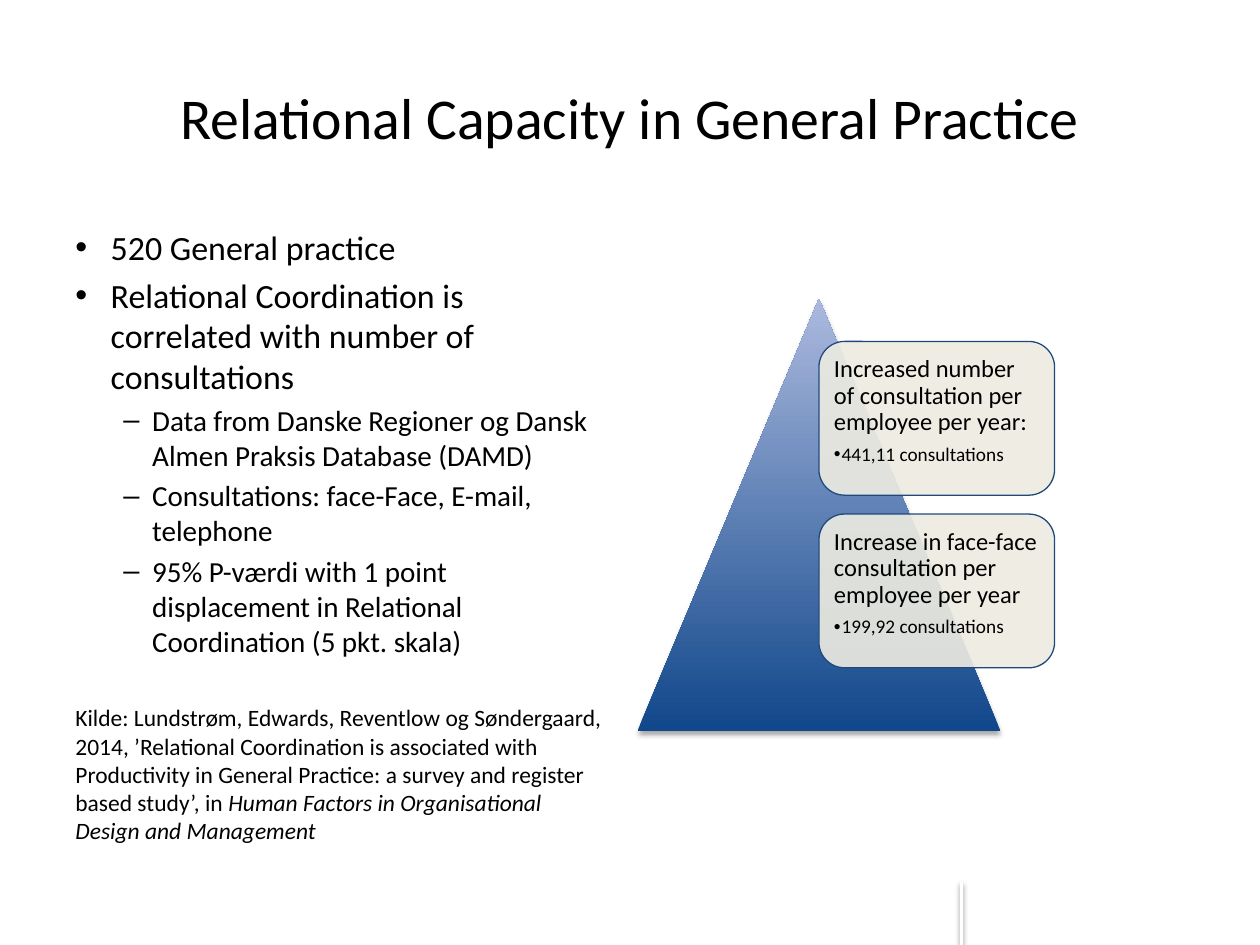
"""Build the slide on relational capacity in general practice."""
from dataclasses import dataclass

from lxml.etree import SubElement
from pptx import Presentation
from pptx.dml.color import RGBColor
from pptx.enum.shapes import MSO_CONNECTOR, MSO_SHAPE
from pptx.enum.text import MSO_ANCHOR, PP_ALIGN
from pptx.oxml.ns import qn
from pptx.util import Emu, Inches, Pt

WIDTH, HEIGHT = Inches(10), Inches(7.5)
FONT = "Calibri"
BLACK = RGBColor(0x00, 0x00, 0x00)
WHITE = RGBColor(0xFF, 0xFF, 0xFF)
DEEP_BLUE = RGBColor(0x11, 0x47, 0x8B)
PALE_BLUE = RGBColor(0xAB, 0xB9, 0xDE)
NAVY = RGBColor(0x1F, 0x49, 0x7D)
CREAM = RGBColor(0xEE, 0xEC, 0xE1)


@dataclass(frozen=True)
class Area:
    """A rectangle in percent of the slide's width and height."""
    left: float
    top: float
    width: float
    height: float

    def box(self) -> tuple[Emu, Emu, Emu, Emu]:
        """Return left, top, width and height as lengths."""
        return across(self.left), down(self.top), across(self.width), down(self.height)


@dataclass(frozen=True)
class Level:
    """The look of one outline level."""
    size: float
    indent: float = 0
    hang: float = 0
    bullet: str = ""


@dataclass(frozen=True)
class Finding:
    """A measured effect and its value."""
    effect: str
    value: str


TITLE = Area(5, 4, 90, 16.67)
BODY = Area(5, 23.33, 44.2, 66)
PYRAMID = Area(50.6, 31.6, 28.8, 45.73)
CARD = Area(65, 36.13, 18.7, 16.27)
CARD_STEP = 18.27

POINT = Level(19.4, 0.28, 0.28, "•")
DETAIL = Level(16.6, 0.61, 0.23, "–")
SOURCE = Level(13.4)
EFFECT = Level(14)
VALUE = Level(11, 0.06, 0.06, "•")

OUTLINE = [
    (POINT, "520 General practice"),
    (POINT, "Relational Coordination is correlated with number of consultations"),
    (DETAIL, "Data from Danske Regioner og Dansk Almen Praksis Database (DAMD)"),
    (DETAIL, "Consultations: face-Face, E-mail, telephone"),
    (DETAIL, "95% P-værdi with 1 point displacement in Relational Coordination (5 pkt. skala)"),
]
CITATION = (
    "Kilde: Lundstrøm, Edwards, Reventlow og Søndergaard, 2014, ’Relational Coordination "
    "is associated with Productivity in General Practice: a survey and register based study’, in "
)
JOURNAL = "Human Factors in Organisational Design and Management"
FINDINGS = [
    Finding("Increased number of consultation per employee per year:", "441,11 consultations"),
    Finding("Increase in face-face consultation per employee per year", "199,92 consultations"),
]


def across(share: float) -> Emu:
    """Turn a percentage of the slide's width into a length."""
    return Emu(round(WIDTH * share / 100))


def down(share: float) -> Emu:
    """Turn a percentage of the slide's height into a length."""
    return Emu(round(HEIGHT * share / 100))


def write(frame, text: str, level: Level, *, italic_end: str = "", align=PP_ALIGN.LEFT,
          before: float = 0, after: float = 0, spacing: float = 1.0) -> None:
    """Append a formatted paragraph, reusing the frame's empty first one."""
    first = frame.paragraphs[0]
    paragraph = frame.add_paragraph() if first.runs else first
    paragraph.alignment = align
    paragraph.line_spacing = spacing
    paragraph.space_before, paragraph.space_after = Pt(before), Pt(after)
    if level.bullet:
        properties = paragraph._p.get_or_add_pPr()
        properties.set("marL", str(Inches(level.indent)))
        properties.set("indent", str(-Inches(level.hang)))
        SubElement(properties, qn("a:buFont"), typeface="Arial")
        SubElement(properties, qn("a:buChar"), char=level.bullet)
    for words, italic in ((text, False), (italic_end, True)):
        if words:
            run = paragraph.add_run()
            run.text = words
            run.font.name, run.font.size = FONT, Pt(level.size)
            run.font.color.rgb, run.font.italic = BLACK, italic


def set_shadow(shape, opacity: int = 0, distance: float = 0) -> None:
    """Give a shape a soft shadow below it, or none when opacity is zero."""
    effects = SubElement(shape._element.spPr, qn("a:effectLst"))
    if opacity:
        shadow = SubElement(effects, qn("a:outerShdw"), blurRad=str(Pt(3.1)),
                            dist=str(Pt(distance)), dir="5400000", rotWithShape="0")
        shade = SubElement(shadow, qn("a:srgbClr"), val=str(BLACK))
        SubElement(shade, qn("a:alpha"), val=str(opacity * 1000))


def draw_footer_rule(slide) -> None:
    """Draw the short white rule at the bottom edge."""
    rule = slide.shapes.add_connector(
        MSO_CONNECTOR.STRAIGHT, across(76.3), down(93.33), across(76.3), HEIGHT)
    rule.line.color.rgb, rule.line.width = WHITE, Pt(2)
    set_shadow(rule, 38, 1.6)


def fill_title(slide) -> None:
    """Place and format the title."""
    title = slide.shapes.title
    title.left, title.top, title.width, title.height = TITLE.box()
    title.text_frame.vertical_anchor = MSO_ANCHOR.MIDDLE
    write(title.text_frame, "Relational Capacity in General Practice", Level(33),
          align=PP_ALIGN.CENTER)


def draw_outline(slide) -> None:
    """Write the bulleted outline and its source."""
    frame = slide.shapes.add_textbox(*BODY.box()).text_frame
    frame.word_wrap = True
    for position, (level, text) in enumerate(OUTLINE):
        write(frame, text, level, before=level.size * 0.2 if position else 0)
    write(frame, CITATION, SOURCE, italic_end=JOURNAL, before=26)


def draw_pyramid(slide) -> None:
    """Draw the shaded triangle behind the findings."""
    pyramid = slide.shapes.add_shape(MSO_SHAPE.ISOSCELES_TRIANGLE, *PYRAMID.box())
    pyramid.fill.gradient()
    pyramid.fill.gradient_angle = 90
    for stop, position, color in zip(pyramid.fill.gradient_stops, (0, 1), (DEEP_BLUE, PALE_BLUE)):
        stop.position, stop.color.rgb = position, color
    pyramid.line.fill.background()
    set_shadow(pyramid, 35, 1.8)


def draw_finding(slide, finding: Finding, row: int) -> None:
    """Draw one translucent card with an effect and its value."""
    area = Area(CARD.left, CARD.top + row * CARD_STEP, CARD.width, CARD.height)
    card = slide.shapes.add_shape(MSO_SHAPE.ROUNDED_RECTANGLE, *area.box())
    card.fill.solid()
    card.fill.fore_color.rgb = CREAM
    tone = card._element.spPr.find(qn("a:solidFill")).find(qn("a:srgbClr"))
    SubElement(tone, qn("a:alpha"), val="90000")
    card.line.color.rgb, card.line.width = NAVY, Pt(0.75)
    set_shadow(card)
    frame = card.text_frame
    frame.word_wrap, frame.vertical_anchor = True, MSO_ANCHOR.TOP
    frame.margin_left = frame.margin_right = Inches(0.06)
    frame.margin_top = frame.margin_bottom = Inches(0.06)
    write(frame, finding.effect, EFFECT, spacing=0.9, after=5)
    write(frame, finding.value, VALUE, spacing=0.9)


def main() -> None:
    """Assemble and save the slide."""
    deck = Presentation()
    deck.slide_width, deck.slide_height = WIDTH, HEIGHT
    slide = deck.slides.add_slide(deck.slide_layouts.get_by_name("Title Only"))
    draw_footer_rule(slide)
    fill_title(slide)
    draw_outline(slide)
    draw_pyramid(slide)
    for row, finding in enumerate(FINDINGS):
        draw_finding(slide, finding, row)
    deck.save("out.pptx")


if __name__ == "__main__":
    main()
